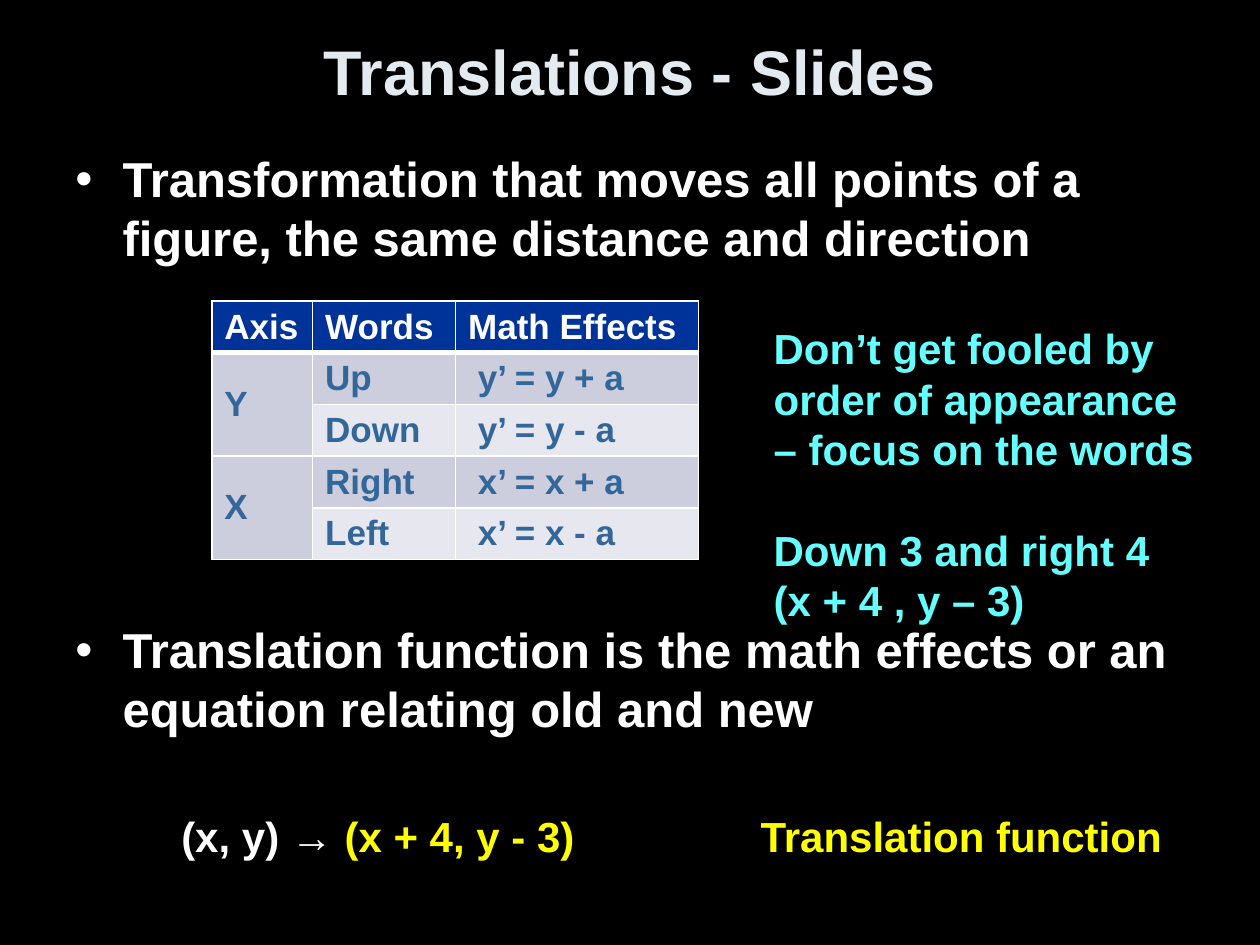
from typing import NamedTuple

from lxml.etree import SubElement
from pptx import Presentation
from pptx.dml.color import RGBColor
from pptx.enum.text import MSO_ANCHOR, MSO_AUTO_SIZE, PP_ALIGN
from pptx.oxml.ns import qn
from pptx.util import Pt

FONT = "Arial"
BLACK = RGBColor(0x00, 0x00, 0x00)
WHITE = RGBColor(0xFF, 0xFF, 0xFF)
PALE_BLUE = RGBColor(0xE3, 0xEB, 0xF1)
CYAN = RGBColor(0x66, 0xFF, 0xFF)
YELLOW = RGBColor(0xFF, 0xFF, 0x00)
HEADER_BLUE = RGBColor(0x00, 0x33, 0x99)
CELL_BLUE = RGBColor(0x33, 0x66, 0x99)
DARK_BAND = RGBColor(0xCC, 0xCE, 0xDE)
LIGHT_BAND = RGBColor(0xE7, 0xE8, 0xEF)


class Box(NamedTuple):
    left: float
    top: float
    width: float
    height: float


class Line(NamedTuple):
    runs: list[tuple[str, RGBColor]]
    space_before: float = 0


def style_font(font, size: float, color: RGBColor | None = None) -> None:
    font.name, font.size, font.bold = FONT, Pt(size), True
    if color is not None:
        font.color.rgb = color


def add_bullet(paragraph) -> None:
    properties = paragraph._p.get_or_add_pPr()
    properties.set("marL", str(Pt(27)))
    properties.set("indent", str(-Pt(27)))
    SubElement(properties, qn("a:buFont"), typeface=FONT)
    SubElement(properties, qn("a:buChar"), char="•")


def add_text(slide, box: Box, size: float, lines: list[Line],
             bulleted: bool = False, wrap: bool = True) -> None:
    frame = slide.shapes.add_textbox(*map(Pt, box)).text_frame
    frame.word_wrap = wrap
    frame.auto_size = MSO_AUTO_SIZE.NONE
    for index, line in enumerate(lines):
        paragraph = frame.add_paragraph() if index else frame.paragraphs[0]
        paragraph.space_before = Pt(line.space_before)
        style_font(paragraph.font, size)
        if bulleted:
            add_bullet(paragraph)
        for text, color in line.runs:
            run = paragraph.add_run()
            run.text = text
            style_font(run.font, size, color)


def set_borders(cell, top: float, bottom: float) -> None:
    properties = cell._tc.get_or_add_tcPr()
    for side, width in (("L", 1), ("R", 1), ("T", top), ("B", bottom)):
        border = SubElement(properties, qn(f"a:ln{side}"), w=str(Pt(width)))
        fill = SubElement(border, qn("a:solidFill"))
        SubElement(fill, qn("a:srgbClr"), val=str(WHITE))


def add_effects_table(slide, box: Box, widths: list[float],
                      rows: list[tuple[str, str, str]]) -> None:
    table = slide.shapes.add_table(len(rows), len(widths), *map(Pt, box)).table
    for column, width in zip(table.columns, widths):
        column.width = Pt(width)
    for r, row in enumerate(rows):
        table.rows[r].height = Pt(box.height / len(rows))
        for c, text in enumerate(row):
            cell = table.cell(r, c)
            set_borders(cell, top=3 if r == 1 else 1, bottom=3 if r == 0 else 1)
            cell.fill.solid()
            if r == 0:
                cell.fill.fore_color.rgb = HEADER_BLUE
            else:
                cell.fill.fore_color.rgb = DARK_BAND if r % 2 else LIGHT_BAND
            cell.text = text
            style_font(cell.text_frame.paragraphs[0].font, 20,
                       CELL_BLUE if r else WHITE)
    # Each axis covers two directions
    for r in range(1, len(rows), 2):
        axis = table.cell(r, 0)
        axis.merge(table.cell(r + 1, 0))
        axis.vertical_anchor = MSO_ANCHOR.MIDDLE


def main() -> None:
    presentation = Presentation()
    presentation.slide_width, presentation.slide_height = Pt(720), Pt(540)
    slide = presentation.slides.add_slide(presentation.slide_layouts[5])
    slide.background.fill.solid()
    slide.background.fill.fore_color.rgb = BLACK

    # Title
    title = slide.shapes.title
    title.left, title.top, title.width, title.height = map(
        Pt, Box(36, 10, 648, 60.5))
    title.text_frame.text = "Translations - Slides"
    title.text_frame.vertical_anchor = MSO_ANCHOR.MIDDLE
    heading = title.text_frame.paragraphs[0]
    heading.alignment = PP_ALIGN.CENTER
    style_font(heading.font, 36, PALE_BLUE)

    # Definitions, with room between them for the table
    add_text(slide, Box(36, 81.4, 648, 370.8), 28, [
        Line([("Transformation that moves all points of a figure, "
               "the same distance and direction", WHITE)], 5.6),
        Line([("Translation function is the math effects or an equation "
               "relating old and new", WHITE)], 202),
    ], bulleted=True)

    # Effects of each direction
    add_effects_table(slide, Box(121, 172, 278, 147.5), [57.6, 81.7, 138.7], [
        ("Axis", "Words", "Math Effects"),
        ("Y", "Up", " y’ = y + a"),
        ("", "Down", " y’ = y - a"),
        ("X", "Right", " x’ = x + a"),
        ("", "Left", " x’ = x - a"),
    ])

    # Example function and its label
    add_text(slide, Box(96.5, 459.5, 250, 36.5), 24, [
        Line([("(x, y) → ", WHITE), ("(x + 4, y - 3)", YELLOW)])], wrap=False)
    add_text(slide, Box(427.5, 459.5, 248, 36.5), 24, [
        Line([("Translation function", YELLOW)])], wrap=False)

    # Advice on word order
    add_text(slide, Box(435, 181, 256, 181.5), 24, [
        Line([("Don’t get fooled by order of appearance "
               "– focus on the words", CYAN)]),
        Line([("Down 3 and right 4", CYAN)], 28.8),
        Line([("(x + 4 , y – 3)", CYAN)]),
    ])

    presentation.save("out.pptx")


if __name__ == "__main__":
    main()
